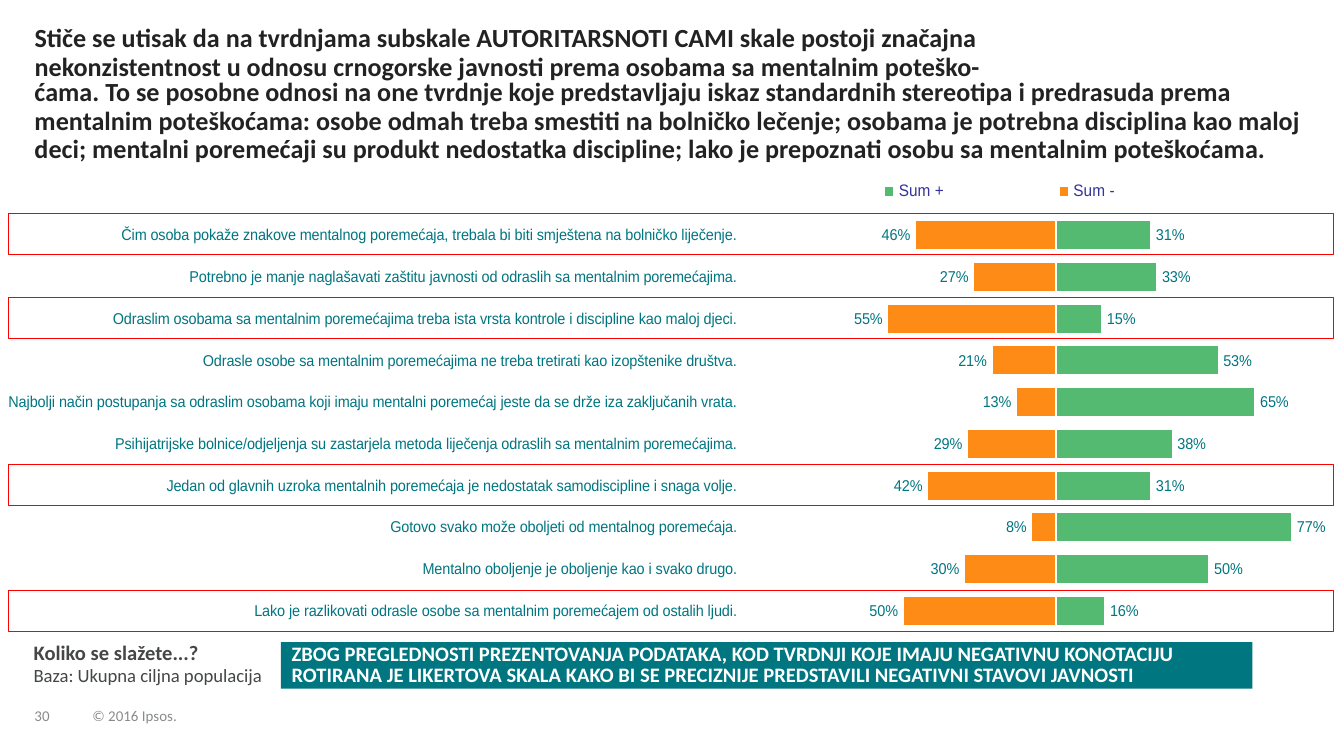
from lxml import etree
from pptx import Presentation
from pptx.chart.data import CategoryChartData
from pptx.dml.color import RGBColor
from pptx.enum.chart import XL_CHART_TYPE, XL_LABEL_POSITION, XL_LEGEND_POSITION, XL_TICK_LABEL_POSITION
from pptx.enum.shapes import MSO_SHAPE
from pptx.enum.text import MSO_ANCHOR, PP_ALIGN
from pptx.oxml.ns import qn
from pptx.util import Pt

BAR = XL_CHART_TYPE.BAR_CLUSTERED
OUTSIDE_END = XL_LABEL_POSITION.OUTSIDE_END
LEGEND_TOP = XL_LEGEND_POSITION.TOP
LABELS_LOW = XL_TICK_LABEL_POSITION.LOW
RECTANGLE = MSO_SHAPE.RECTANGLE
TOP, MIDDLE, BOTTOM = MSO_ANCHOR.TOP, MSO_ANCHOR.MIDDLE, MSO_ANCHOR.BOTTOM
LEFT = PP_ALIGN.LEFT

COLORS = {
    "title": "222223", "body": "444647", "footer": "888B8D", "teal": "007681",
    "navy": "333399", "orange": "FF8B17", "green": "54BA71", "red": "FF0000", "white": "FFFFFF",
}

STATEMENTS = [
    ("Čim osoba pokaže znakove mentalnog poremećaja, trebala bi biti smještena na bolničko liječenje.", 46, 31),
    ("Potrebno je manje naglašavati zaštitu javnosti od odraslih sa mentalnim poremećajima.", 27, 33),
    ("Odraslim osobama sa mentalnim poremećajima treba ista vrsta kontrole i discipline kao maloj djeci.", 55, 15),
    ("Odrasle osobe sa mentalnim poremećajima ne treba tretirati kao izopštenike društva.", 21, 53),
    ("Najbolji način postupanja sa odraslim osobama koji imaju mentalni poremećaj jeste da se drže iza "
     "zaključanih vrata.", 13, 65),
    ("Psihijatrijske bolnice/odjeljenja su zastarjela metoda liječenja odraslih sa mentalnim poremećajima.", 29, 38),
    ("Jedan od glavnih uzroka mentalnih poremećaja je nedostatak samodiscipline i snaga volje.", 42, 31),
    ("Gotovo svako može oboljeti od mentalnog poremećaja.", 8, 77),
    ("Mentalno oboljenje je oboljenje kao i svako drugo.", 30, 50),
    ("Lako je razlikovati odrasle osobe sa mentalnim poremećajem od ostalih ljudi.", 50, 16),
]
HIGHLIGHTED_ROWS = (0, 2, 6, 9)
FIRST_ROW_TOP = 114.5
ROW_STEP = 22.4


class SlideBuilder:
    text_font = "Calibri"
    chart_font = "Arial"

    def __init__(self, slide):
        self.slide = slide

    def color(self, name):
        return RGBColor.from_string(COLORS[name])

    def style_font(self, font, name, size, color, bold=False):
        font.name = name
        font.size = Pt(size)
        font.bold = bold
        font.color.rgb = self.color(color)

    def fill_text(self, shape, text, size, color, bold=False, spacing=0.9, after=0,
                  anchor=TOP, inset=0, wrap=True):
        frame = shape.text_frame
        frame.margin_left = Pt(inset)
        frame.margin_right = frame.margin_top = frame.margin_bottom = 0
        frame.word_wrap = wrap
        frame.vertical_anchor = anchor
        paragraph = frame.paragraphs[0]
        paragraph.text = text
        paragraph.alignment = LEFT
        paragraph.line_spacing = spacing
        paragraph.space_before = 0
        paragraph.space_after = Pt(after)
        for run in paragraph.runs:
            self.style_font(run.font, self.text_font, size, color, bold)
        return paragraph

    def title(self, box, text, **style):
        shape = self.slide.shapes.title
        shape.left, shape.top, shape.width, shape.height = map(Pt, box)
        return self.fill_text(shape, text, **style)

    def text(self, box, text, **style):
        return self.fill_text(self.slide.shapes.add_textbox(*map(Pt, box)), text, **style)

    def rectangle(self, box, fill=None, line=None):
        shape = self.slide.shapes.add_shape(RECTANGLE, *map(Pt, box))
        shape.shadow.inherit = False
        if fill:
            shape.fill.solid()
            shape.fill.fore_color.rgb = self.color(fill)
        else:
            shape.fill.background()
        if line:
            shape.line.color.rgb = self.color(line)
            shape.line.width = Pt(0.25)
        else:
            shape.line.fill.background()
        return shape

    def place(self, element, after_tag, inner=False, **fractions):
        for old in element.findall(qn("c:layout")):
            element.remove(old)
        layout = etree.Element(qn("c:layout"))
        manual = etree.SubElement(layout, qn("c:manualLayout"))
        if inner:
            etree.SubElement(manual, qn("c:layoutTarget"), val="inner")
        for mode in ("xMode", "yMode"):
            etree.SubElement(manual, qn("c:" + mode), val="edge")
        for key, value in fractions.items():
            etree.SubElement(manual, qn("c:" + key), val=str(value))
        if after_tag:
            element.find(qn(after_tag)).addnext(layout)
        else:
            element.insert(0, layout)

    def diverging_chart(self, box, statements):
        data = CategoryChartData()
        data.categories = [statement for statement, _, _ in statements]
        data.add_series("Sum -", [-minus for _, minus, _ in statements])
        data.add_series("Sum +", [plus for _, _, plus in statements])
        chart = self.slide.shapes.add_chart(BAR, *map(Pt, box), data).chart
        chart.has_title = False
        self.style_font(chart.font, self.chart_font, 9.7, "navy")

        plot = chart.plots[0]
        plot.gap_width = 40
        plot.overlap = 100
        plot.vary_by_categories = False
        for series, color in zip(plot.series, ("orange", "green")):
            series.invert_if_negative = False
            series.format.fill.solid()
            series.format.fill.fore_color.rgb = self.color(color)
            series.format.line.color.rgb = self.color("white")
            series.format.line.width = Pt(1)
            labels = series.data_labels
            labels.show_value = True
            labels.position = OUTSIDE_END
            labels.number_format = '0"%";0"%"'
            labels.number_format_is_linked = False
            self.style_font(labels.font, self.chart_font, 8.4, "teal")

        category_axis = chart.category_axis
        category_axis.reverse_order = True
        category_axis.tick_label_position = LABELS_LOW
        category_axis.format.line.fill.background()
        self.style_font(category_axis.tick_labels.font, self.chart_font, 8.4, "teal")
        value_axis = chart.value_axis
        value_axis.minimum_scale, value_axis.maximum_scale = -100, 100
        value_axis.has_major_gridlines = False
        value_axis.visible = False

        chart.has_legend = True
        legend = chart.legend
        legend.position = LEGEND_TOP
        legend.include_in_layout = False
        self.style_font(legend.font, self.chart_font, 8.9, "navy")
        self.place(legend._element, "c:legendPos", x=0.53, y=0.01, w=0.36, h=0.08)
        self.place(plot._element.getparent(), None, inner=True, x=0.51, y=0.1, w=0.49, h=0.9)


def main():
    presentation = Presentation()
    presentation.slide_width, presentation.slide_height = Pt(720), Pt(405)
    slide = presentation.slides.add_slide(presentation.slide_layouts[5])
    builder = SlideBuilder(slide)

    heading = {"size": 14, "color": "title", "bold": True}
    builder.title(
        (18.5, 13.5, 516, 30),
        "Stiče se utisak da na tvrdnjama subskale AUTORITARSNOTI CAMI skale postoji značajna "
        "nekonzistentnost u odnosu crnogorske javnosti prema osobama sa mentalnim poteško-", **heading)
    builder.text(
        (18.5, 42.5, 684, 46),
        "ćama. To se posobne odnosi na one tvrdnje koje predstavljaju iskaz standardnih stereotipa i predrasuda "
        "prema mentalnim poteškoćama: osobe odmah treba smestiti na bolničko lečenje; osobama je potrebna "
        "disciplina kao maloj deci; mentalni poremećaji su produkt nedostatka discipline; lako je prepoznati "
        "osobu sa mentalnim poteškoćama.", **heading)

    builder.diverging_chart((4.5, 90, 725.5, 248.5), STATEMENTS)
    for row in HIGHLIGHTED_ROWS:
        builder.rectangle((4.5, FIRST_ROW_TOP + row * ROW_STEP, 710, 22), line="red")

    question = builder.text((18, 344, 218, 25), "Koliko se slažete...?\vBaza: Ukupna ciljna populacija",
                            size=11, color="body", bold=True, spacing=0.95, after=3)
    base_font = question.runs[1].font
    base_font.size = Pt(10)
    base_font.bold = False

    banner = builder.rectangle((150.5, 344, 520.5, 25), fill="teal")
    builder.fill_text(
        banner,
        "ZBOG PREGLEDNOSTI PREZENTOVANJA PODATAKA, KOD TVRDNJI KOJE IMAJU NEGATIVNU KONOTACIJU "
        "ROTIRANA JE LIKERTOVA SKALA KAKO BI SE PRECIZNIJE PREDSTAVILI NEGATIVNI STAVOVI JAVNOSTI",
        size=11, color="white", bold=True, spacing=0.85, after=3, anchor=MIDDLE, inset=5.75)

    footer = {"size": 8, "color": "footer", "spacing": 0.85, "anchor": BOTTOM, "wrap": False}
    builder.text((18.5, 369.5, 24.5, 18.5), "30", **footer)
    builder.text((49.5, 374.5, 55, 13.5), "© 2016 Ipsos.", **footer)

    presentation.save("out.pptx")


if __name__ == "__main__":
    main()
